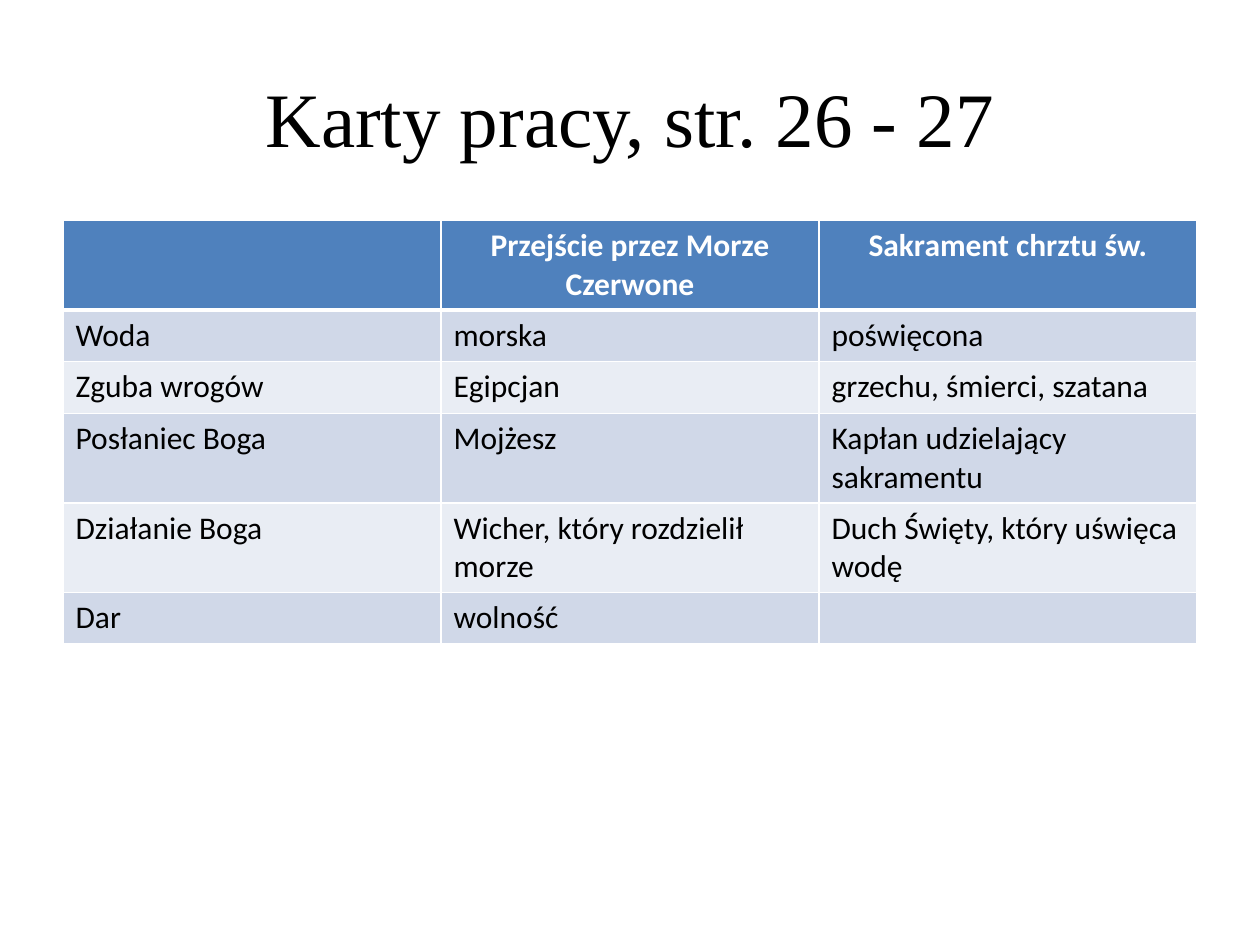
from lxml import etree
from pptx import Presentation
from pptx.dml.color import RGBColor
from pptx.enum import text
from pptx.oxml import ns
from pptx.util import Inches, Pt

BLACK = RGBColor(0x00, 0x00, 0x00)
WHITE = RGBColor(0xFF, 0xFF, 0xFF)
HEADER_BLUE = RGBColor(0x4F, 0x81, 0xBD)
BAND_DARK = RGBColor(0xD0, 0xD8, 0xE8)
BAND_LIGHT = RGBColor(0xE9, 0xED, 0xF4)

COMPARISON = [
    ("", "Przejście przez Morze Czerwone", "Sakrament chrztu św."),
    ("Woda", "morska", "poświęcona"),
    ("Zguba wrogów", "Egipcjan", "grzechu, śmierci, szatana"),
    ("Posłaniec Boga", "Mojżesz", "Kapłan udzielający sakramentu"),
    ("Działanie Boga", "Wicher, który rozdzielił morze", "Duch Święty, który uświęca wodę"),
    ("Dar", "wolność", ""),
]


def add_border(cell, side, width):
    """Draw a white line on one side (L, R, T or B) of a table cell."""
    line = etree.SubElement(cell._tc.get_or_add_tcPr(), ns.qn(f"a:ln{side}"), w=str(Pt(width)))
    fill = etree.SubElement(line, ns.qn("a:solidFill"))
    etree.SubElement(fill, ns.qn("a:srgbClr"), val=str(WHITE))


prs = Presentation()
prs.slide_width, prs.slide_height = Inches(10), Inches(7.5)
slide = prs.slides.add_slide(prs.slide_layouts[5])

# Title
title = slide.shapes.title
title.left, title.top = Inches(0.5), Inches(0.3)
title.width, title.height = Inches(9), Inches(1.25)
title.text_frame.text = "Karty pracy, str. 26 - 27"
title.text_frame.vertical_anchor = text.MSO_ANCHOR.MIDDLE
heading = title.text_frame.paragraphs[0]
heading.alignment = text.PP_ALIGN.CENTER
heading.font.name = "Times New Roman"
heading.font.size = Pt(44)
heading.font.color.rgb = BLACK

# Comparison table
row_count, column_count = len(COMPARISON), len(COMPARISON[0])
table = slide.shapes.add_table(
    row_count, column_count, Inches(0.5), Inches(1.75), Inches(9), Inches(0.41 * row_count)
).table

for r, entries in enumerate(COMPARISON):
    is_header = r == 0
    band = HEADER_BLUE if is_header else (BAND_DARK if r % 2 else BAND_LIGHT)
    for c, entry in enumerate(entries):
        cell = table.cell(r, c)
        # The line under the header is thicker
        add_border(cell, "L", 1)
        add_border(cell, "R", 1)
        add_border(cell, "T", 3 if r == 1 else 1)
        add_border(cell, "B", 3 if is_header else 1)
        cell.fill.solid()
        cell.fill.fore_color.rgb = band

        cell.text = entry
        paragraph = cell.text_frame.paragraphs[0]
        paragraph.alignment = text.PP_ALIGN.CENTER if is_header else text.PP_ALIGN.LEFT
        paragraph.font.name = "Calibri"
        paragraph.font.size = Pt(18)
        paragraph.font.bold = is_header
        paragraph.font.color.rgb = WHITE if is_header else BLACK

prs.save("out.pptx")
